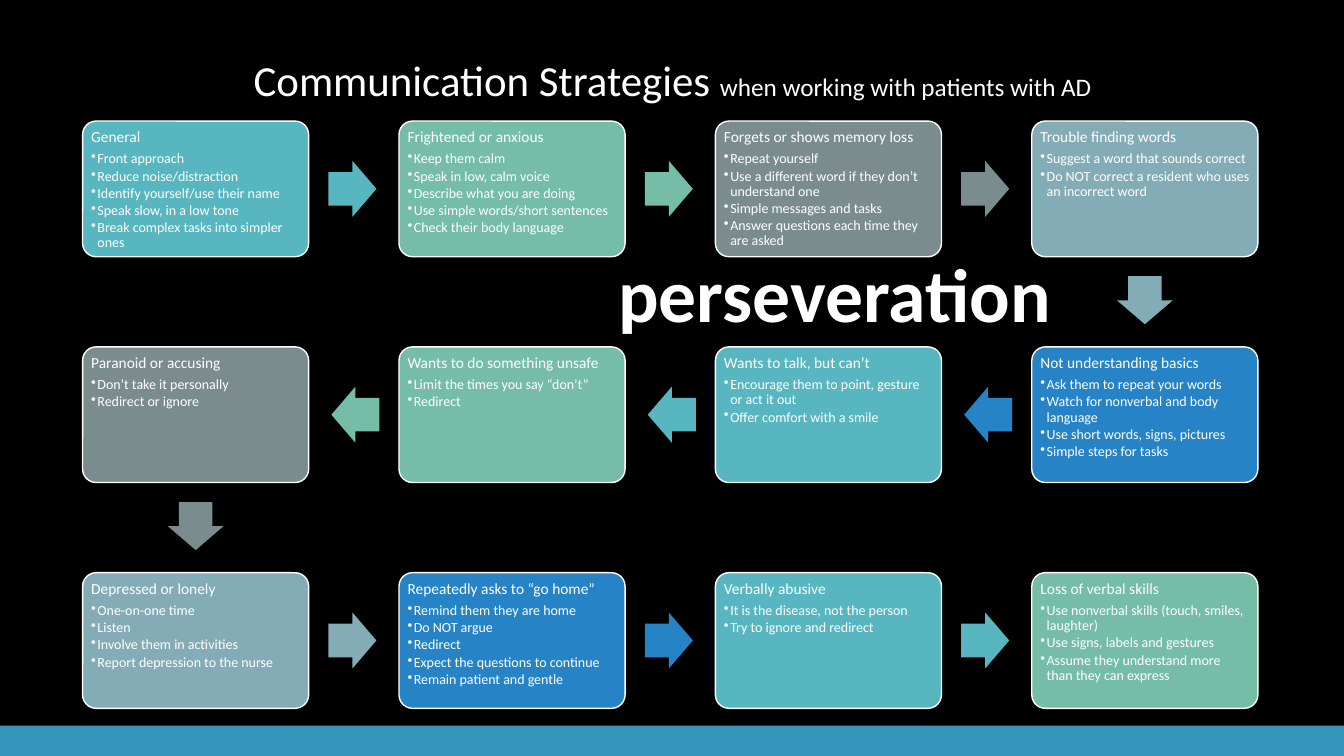
from dataclasses import dataclass
from itertools import cycle

from lxml.etree import SubElement
from pptx import Presentation
from pptx.dml.color import RGBColor
from pptx.enum.shapes import MSO_SHAPE as Preset
from pptx.enum.text import MSO_ANCHOR as Anchor, MSO_AUTO_SIZE as AutoSize, PP_ALIGN as Align
from pptx.oxml.ns import qn
from pptx.shapes.autoshape import Shape
from pptx.slide import Slide
from pptx.text.text import TextFrame, _Paragraph as Paragraph
from pptx.util import Pt

FONT = "Calibri"
BLACK = RGBColor(0x00, 0x00, 0x00)
WHITE = RGBColor(0xFF, 0xFF, 0xFF)
BAR_BLUE = RGBColor(0x34, 0x94, 0xBA)
TEAL = RGBColor(0x58, 0xB6, 0xC0)
GREEN = RGBColor(0x75, 0xBD, 0xA7)
GRAY = RGBColor(0x7A, 0x8C, 0x8E)
SLATE = RGBColor(0x84, 0xAC, 0xB6)
BLUE = RGBColor(0x26, 0x83, 0xC6)
CARD_COLORS = (TEAL, GREEN, GRAY, SLATE, BLUE)

# Layout, in points
SLIDE_WIDTH, SLIDE_HEIGHT = 960, 540
COLUMNS = 4
GRID_LEFT, GRID_TOP = 59, 86.5
COLUMN_STEP, ROW_STEP = 226, 161.3
CARD_WIDTH, CARD_HEIGHT = 161.5, 96.9
ARROW_WIDTH, ARROW_HEIGHT = 34.3, 40
BULLET_INDENT = 4.5


@dataclass(frozen=True)
class Card:
    heading: str
    tips: tuple[str, ...]


@dataclass(frozen=True)
class ArrowPlace:
    """Arrow offset from its card's corner, and its rotation."""
    left: float
    top: float
    rotation: int


ARROW_RIGHT = ArrowPlace(175.6, 28.4, 0)
ARROW_LEFT = ArrowPlace(-48.3, 28.4, 180)
ARROW_DOWN = ArrowPlace(63.6, 108, 90)

CARDS = (
    Card("General", (
        "Front approach", "Reduce noise/distraction", "Identify yourself/use their name",
        "Speak slow, in a low tone", "Break complex tasks into simpler ones")),
    Card("Frightened or anxious", (
        "Keep them calm", "Speak in low, calm voice", "Describe what you are doing",
        "Use simple words/short sentences", "Check their body language")),
    Card("Forgets or shows memory loss", (
        "Repeat yourself", "Use a different word if they don’t understand one",
        "Simple messages and tasks", "Answer questions each time they are asked")),
    Card("Trouble finding words", (
        "Suggest a word that sounds correct",
        "Do NOT correct a resident who uses an incorrect word")),
    Card("Not understanding basics", (
        "Ask them to repeat your words", "Watch for nonverbal and body language",
        "Use short words, signs, pictures", "Simple steps for tasks")),
    Card("Wants to talk, but can’t", (
        "Encourage them to point, gesture or act it out", "Offer comfort with a smile")),
    Card("Wants to do something unsafe", (
        "Limit the times you say “don’t”", "Redirect")),
    Card("Paranoid or accusing", ("Don’t take it personally", "Redirect or ignore")),
    Card("Depressed or lonely", (
        "One-on-one time", "Listen", "Involve them in activities",
        "Report depression to the nurse")),
    Card("Repeatedly asks to “go home”", (
        "Remind them they are home", "Do NOT argue", "Redirect",
        "Expect the questions to continue", "Remain patient and gentle")),
    Card("Verbally abusive", (
        "It is the disease, not the person", "Try to ignore and redirect")),
    Card("Loss of verbal skills", (
        "Use nonverbal skills (touch, smiles, laughter)",
        "Use signs, labels and gestures",
        "Assume they understand more than they can express")),
)


def add_run(paragraph: Paragraph, text: str, size: float, bold: bool = False) -> None:
    run = paragraph.add_run()
    run.text = text
    run.font.name = FONT
    run.font.size = Pt(size)
    run.font.bold = bold
    run.font.color.rgb = WHITE


def add_filled_shape(slide: Slide, preset: Preset, left: float, top: float,
                     width: float, height: float, color: RGBColor) -> Shape:
    shape = slide.shapes.add_shape(preset, Pt(left), Pt(top), Pt(width), Pt(height))
    shape.shadow.inherit = False
    shape.fill.solid()
    shape.fill.fore_color.rgb = color
    shape.line.fill.background()
    return shape


def add_bullet(paragraph: Paragraph) -> None:
    properties = paragraph._p.get_or_add_pPr()
    properties.set("marL", str(Pt(BULLET_INDENT)))
    properties.set("indent", str(-Pt(BULLET_INDENT)))
    SubElement(properties, qn("a:buChar")).set("char", "•")


def fill_card_text(frame: TextFrame, card: Card) -> None:
    frame.word_wrap = True
    frame.vertical_anchor = Anchor.TOP
    frame.margin_left = frame.margin_right = Pt(3.3)
    frame.margin_top = frame.margin_bottom = Pt(3.3)
    for index, text in enumerate((card.heading, *card.tips)):
        is_tip = index > 0
        paragraph = frame.add_paragraph() if is_tip else frame.paragraphs[0]
        paragraph.alignment = Align.LEFT
        paragraph.line_spacing = 0.9
        paragraph.space_after = Pt(1.5 if is_tip else 3.85)
        if is_tip:
            paragraph.level = 1
            add_bullet(paragraph)
        add_run(paragraph, text, 10 if is_tip else 11)


def add_card(slide: Slide, card: Card, left: float, top: float, color: RGBColor) -> None:
    shape = add_filled_shape(slide, Preset.ROUNDED_RECTANGLE, left, top,
                             CARD_WIDTH, CARD_HEIGHT, color)
    shape.adjustments[0] = 0.1
    shape.line.color.rgb = WHITE
    shape.line.width = Pt(1)
    fill_card_text(shape.text_frame, card)


def add_arrow(slide: Slide, place: ArrowPlace, left: float, top: float,
              color: RGBColor) -> None:
    arrow = add_filled_shape(slide, Preset.RIGHT_ARROW, left + place.left, top + place.top,
                             ARROW_WIDTH, ARROW_HEIGHT, color)
    arrow.adjustments[0] = 0.6
    arrow.adjustments[1] = 0.5
    arrow.rotation = place.rotation


def add_card_path(slide: Slide) -> None:
    """Lay the cards row by row, turning back at each row's end."""
    for index, (card, color) in enumerate(zip(CARDS, cycle(CARD_COLORS))):
        row, step = divmod(index, COLUMNS)
        runs_left = row % 2 == 1
        column = COLUMNS - 1 - step if runs_left else step
        left = GRID_LEFT + column * COLUMN_STEP
        top = GRID_TOP + row * ROW_STEP
        add_card(slide, card, left, top, color)
        if index == len(CARDS) - 1:
            continue
        if step == COLUMNS - 1:
            place = ARROW_DOWN
        else:
            place = ARROW_LEFT if runs_left else ARROW_RIGHT
        add_arrow(slide, place, left, top, color)


def fill_title(slide: Slide) -> None:
    title = slide.shapes.title
    title.left, title.top, title.width, title.height = Pt(106), Pt(36.7), Pt(749), Pt(42.5)
    frame = title.text_frame
    frame.auto_size = AutoSize.NONE
    frame.word_wrap = True
    frame.vertical_anchor = Anchor.BOTTOM
    paragraph = frame.paragraphs[0]
    paragraph.alignment = Align.CENTER
    paragraph.line_spacing = 0.9
    add_run(paragraph, "Communication Strategies ", 30.6)
    add_run(paragraph, "when working with patients with AD", 18)


def add_keyword(slide: Slide) -> None:
    box = slide.shapes.add_textbox(Pt(432.7), Pt(172.8), Pt(326.9), Pt(72.7))
    frame = box.text_frame
    frame.word_wrap = False
    frame.auto_size = AutoSize.SHAPE_TO_FIT_TEXT
    paragraph = frame.paragraphs[0]
    paragraph.alignment = Align.CENTER
    add_run(paragraph, "perseveration", 54, bold=True)


def main() -> None:
    presentation = Presentation()
    presentation.slide_width = Pt(SLIDE_WIDTH)
    presentation.slide_height = Pt(SLIDE_HEIGHT)
    slide = presentation.slides.add_slide(presentation.slide_layouts.get_by_name("Title Only"))

    # Background and bottom bar
    slide.background.fill.solid()
    slide.background.fill.fore_color.rgb = BLACK
    add_filled_shape(slide, Preset.RECTANGLE, 0, 518.4, SLIDE_WIDTH, 21.6, BAR_BLUE)

    # Title, cards and keyword
    fill_title(slide)
    add_card_path(slide)
    add_keyword(slide)
    presentation.save("out.pptx")


if __name__ == "__main__":
    main()
